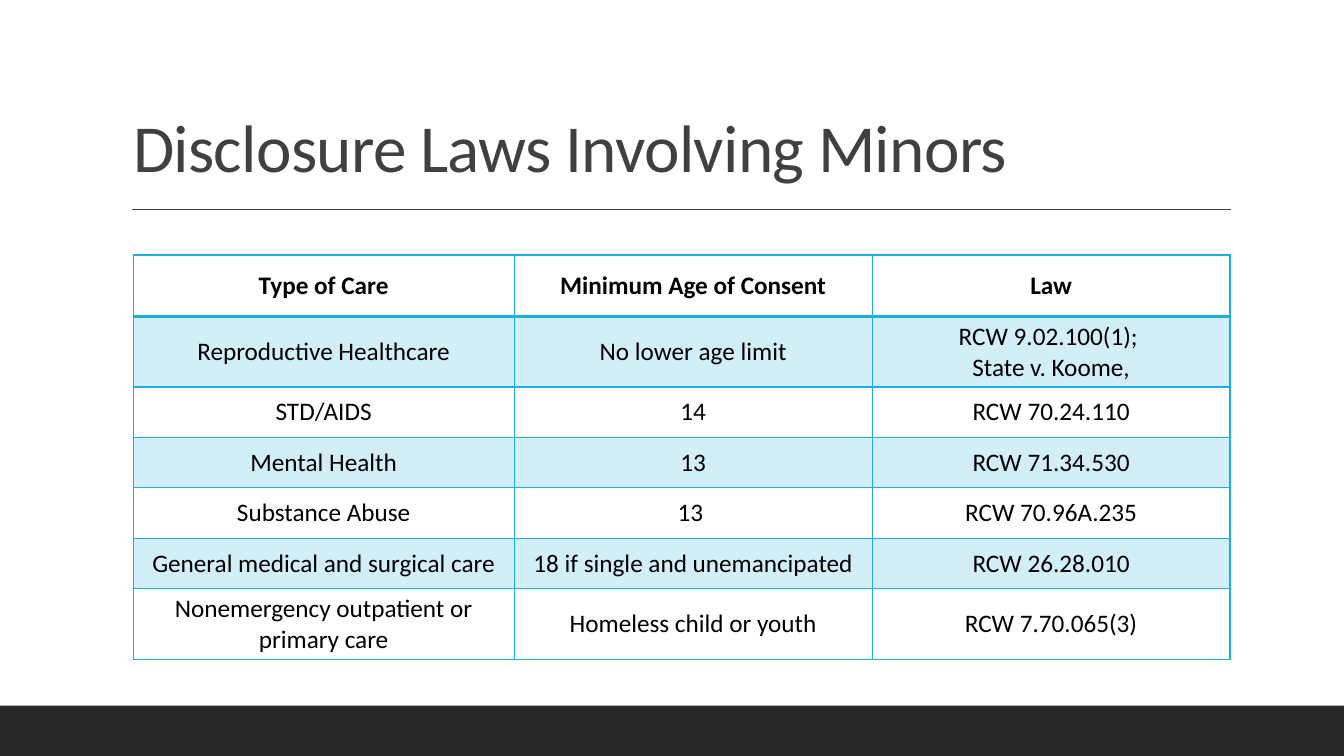
from lxml.etree import SubElement
from pptx import Presentation
from pptx.dml.color import RGBColor
from pptx.enum.shapes import MSO_CONNECTOR, MSO_SHAPE
from pptx.enum.text import MSO_ANCHOR, PP_ALIGN
from pptx.oxml.ns import qn
from pptx.util import Inches, Pt

TITLE = "Disclosure Laws Involving Minors"
ROWS = [
    ("Type of Care", "Minimum Age of Consent", "Law"),
    ("Reproductive Healthcare", "No lower age limit",
     "RCW 9.02.100(1); \nState v. Koome,"),
    ("STD/AIDS", "14", "RCW 70.24.110"),
    ("Mental Health", "13", "RCW 71.34.530"),
    ("Substance Abuse", "13 ", "RCW 70.96A.235"),
    ("General medical and surgical care", "18 if single and unemancipated",
     "RCW 26.28.010"),
    ("Nonemergency outpatient or primary care", "Homeless child or youth",
     "RCW 7.70.065(3)"),
]
WIDTHS = [3.78, 3.55, 3.55]
HEIGHTS = [0.61, 0.7, 0.5, 0.5, 0.5, 0.5, 0.7]
LEFT, WIDTH = 1.32, sum(WIDTHS)

FONT = "Calibri"
BLACK = RGBColor(0x00, 0x00, 0x00)
DARK = RGBColor(0x26, 0x26, 0x26)
GREY = RGBColor(0x40, 0x40, 0x40)
BLUE = RGBColor(0x1C, 0xAD, 0xE4)


def style(para, size, color, bold=False):
    font = para.font
    font.name, font.size, font.bold = FONT, Pt(size), bold
    font.color.rgb = color


def add_frame(slide):
    """Draw the footer band and the rule under the title."""
    band = slide.shapes.add_shape(MSO_SHAPE.RECTANGLE, 0, Inches(7),
                                  Inches(13.33), Inches(0.5))
    band.shadow.inherit = False
    band.fill.solid()
    band.fill.fore_color.rgb = DARK
    band.line.fill.background()
    rule = slide.shapes.add_connector(MSO_CONNECTOR.STRAIGHT, Inches(1.31),
                                      Inches(2.08), Inches(12.21), Inches(2.08))
    rule.line.color.rgb = GREY
    rule.line.width = Pt(1)
    SubElement(rule._element.spPr, qn("a:effectLst"))


def add_title(slide):
    box = slide.shapes.add_textbox(Inches(LEFT), Inches(0.31),
                                   Inches(WIDTH), Inches(1.59))
    frame = box.text_frame
    frame.word_wrap = True
    frame.vertical_anchor = MSO_ANCHOR.BOTTOM
    frame.margin_left = 0
    para = frame.paragraphs[0]
    para.line_spacing = 0.9
    run = para.add_run()
    run.text = TITLE
    run._r.get_or_add_rPr().set("spc", "-50")
    style(para, 48, GREY)


def add_borders(cell, head):
    props = cell._tc.get_or_add_tcPr()
    for side in "LRTB":
        width = Pt(2 if head and side == "B" else 1)
        line = SubElement(props, qn(f"a:ln{side}"), w=str(width))
        fill = SubElement(line, qn("a:solidFill"))
        SubElement(fill, qn("a:srgbClr"), val=str(BLUE))


def tint(cell):
    """Fill the cell with blue at 20 % opacity."""
    cell.fill.solid()
    cell.fill.fore_color.rgb = BLUE
    color = cell._tc.tcPr.find(qn("a:solidFill")).find(qn("a:srgbClr"))
    SubElement(color, qn("a:alpha"), val="20000")


def add_laws(slide):
    table = slide.shapes.add_table(
        len(ROWS), len(WIDTHS), Inches(LEFT), Inches(2.53),
        Inches(WIDTH), Inches(sum(HEIGHTS))).table
    table.first_row = table.horz_banding = False
    for col, width in zip(table.columns, WIDTHS):
        col.width = Inches(width)
    for i, (row, height, texts) in enumerate(zip(table.rows, HEIGHTS, ROWS)):
        row.height = Inches(height)
        for cell, text in zip(row.cells, texts):
            cell.text = text
            cell.vertical_anchor = MSO_ANCHOR.MIDDLE
            for para in cell.text_frame.paragraphs:
                para.alignment = PP_ALIGN.CENTER
                style(para, 18, BLACK, bold=i == 0)
            add_borders(cell, head=i == 0)
            if i % 2:
                tint(cell)
            else:
                cell.fill.background()


def main():
    deck = Presentation()
    deck.slide_width, deck.slide_height = Inches(13.33), Inches(7.5)
    slide = deck.slides.add_slide(deck.slide_layouts[6])
    add_frame(slide)
    add_title(slide)
    add_laws(slide)
    deck.save("out.pptx")


if __name__ == "__main__":
    main()
